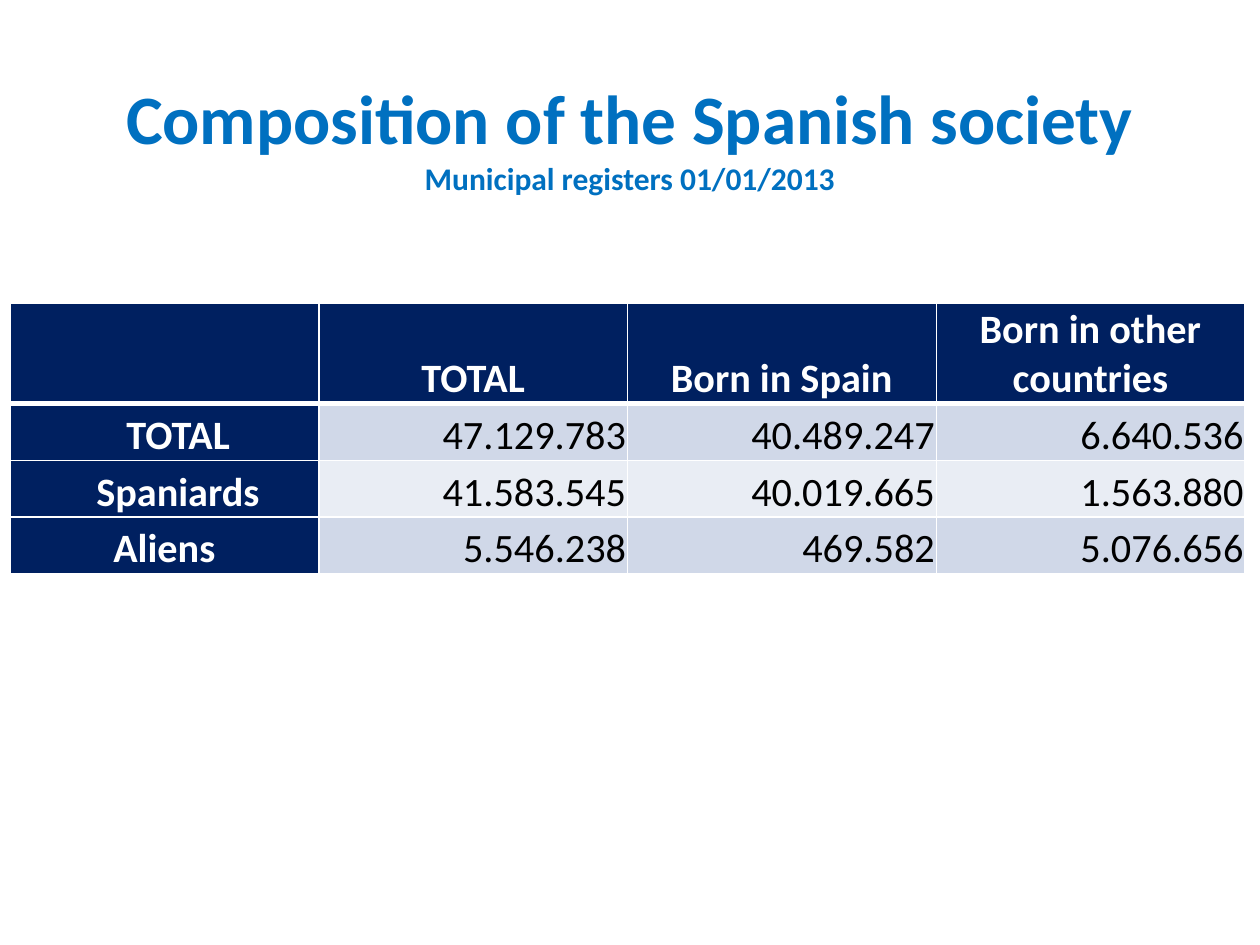
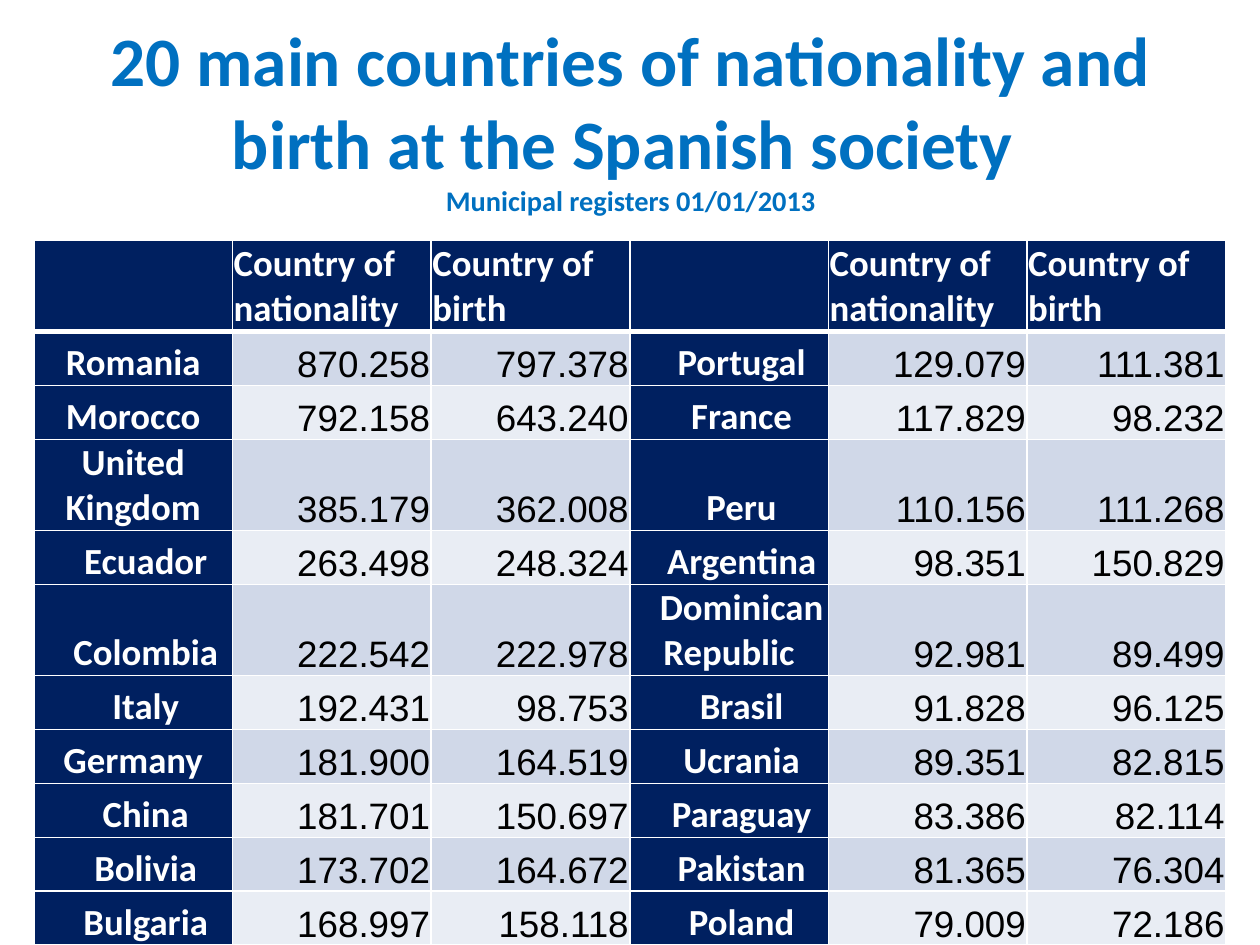
"""Builds two slides of Spanish population tables from the 2013 municipal registers."""
from copy import deepcopy

from lxml import etree
from pptx import Presentation
from pptx.dml.color import RGBColor
from pptx.enum import text
from pptx.oxml import ns
from pptx.util import Pt

NAVY, BLUE, WHITE, BLACK = "002060", "0070C0", "FFFFFF", "000000"
BANDS = ["D0D8E8", "E9EDF4"]
SUBTITLE = "Municipal registers 01/01/2013"
FLUSH_LABELS = {"Aliens", "Romania", "Morocco", "United Kingdom", "Germany"}
ALIGN = text.PP_ALIGN

SLIDES = [
    {
        "title": "Composition of the Spanish society",
        "title_box": (36, 21.6, 648, 112.3),
        "subtitle_size": 18,
        "table_at": (5.8, 173.5),
        "column_width": 176.4,
        "row_height": 32.4,
        "tall_rows": {0: 56.2},
        "size": 23,
        "figure_font": "Calibri",
        "header_align": ALIGN.CENTER,
        "label_columns": [0],
        "rows": [
            ["", "TOTAL", "Born in Spain", "Born in other countries"],
            ["TOTAL", "47.129.783", "40.489.247", "6.640.536"],
            ["Spaniards", "41.583.545", "40.019.665", "1.563.880"],
            ["Aliens", "5.546.238", "469.582", "5.076.656"],
        ],
    },
    {
        "title": "20 main countries of nationality and birth at the Spanish society ",
        "title_box": (20.2, 0, 680.4, 133.9),
        "subtitle_size": 16.2,
        "table_at": (19.4, 137.5),
        "column_width": 113.5,
        "row_height": 30.8,
        "tall_rows": {0: 51.2, 3: 51.2, 5: 51.2},
        "size": 21,
        "figure_font": "Arial",
        "header_align": ALIGN.LEFT,
        "label_columns": [0, 3],
        "rows": [
            ["", "Country of nationality", "Country of birth"] * 2,
            ["Romania", "870.258", "797.378", "Portugal", "129.079", "111.381"],
            ["Morocco", "792.158", "643.240", "France", "117.829", "98.232"],
            ["United Kingdom", "385.179", "362.008", "Peru", "110.156", "111.268"],
            ["Ecuador", "263.498", "248.324", "Argentina", "98.351", "150.829"],
            ["Colombia", "222.542", "222.978", "Dominican Republic", "92.981", "89.499"],
            ["Italy", "192.431", "98.753", "Brasil", "91.828", "96.125"],
            ["Germany", "181.900", "164.519", "Ucrania", "89.351", "82.815"],
            ["China", "181.701", "150.697", "Paraguay", "83.386", "82.114"],
            ["Bolivia", "173.702", "164.672", "Pakistan", "81.365", "76.304"],
            ["Bulgaria", "168.997", "158.118", "Poland", "79.009", "72.186"],
        ],
    },
]


def rgb(code):
    return RGBColor.from_string(code)


def add_run(paragraph, words, size, color, bold=True, font="Calibri"):
    run = paragraph.add_run()
    run.text = words
    run.font.size, run.font.bold, run.font.name = Pt(size), bold, font
    run.font.color.rgb = rgb(color)
    return run


def add_title(slide, content):
    title = slide.shapes.title
    title.left, title.top, title.width, title.height = map(Pt, content["title_box"])
    frame = title.text_frame
    frame.word_wrap = True
    frame.auto_size = text.MSO_AUTO_SIZE.NONE
    frame.vertical_anchor = text.MSO_ANCHOR.MIDDLE
    paragraph = frame.paragraphs[0]
    paragraph.alignment = ALIGN.CENTER
    heading = add_run(paragraph, content["title"], 39.6, BLUE)
    paragraph.add_line_break()
    paragraph._p[-1].append(deepcopy(heading._r.rPr))
    add_run(paragraph, SUBTITLE, content["subtitle_size"], BLUE)


def add_borders(cell, row):
    heavy_side = {0: "B", 1: "T"}.get(row)
    for position, side in enumerate("LRTB"):
        line = etree.Element(ns.qn(f"a:ln{side}"), w=str(Pt(3 if side == heavy_side else 1)))
        fill = etree.SubElement(line, ns.qn("a:solidFill"))
        etree.SubElement(fill, ns.qn("a:srgbClr"), val=WHITE)
        cell._tc.tcPr.insert(position, line)


def fill_cell(cell, words, row, column, content):
    is_header, is_label = row == 0, column in content["label_columns"]
    dark = is_header or is_label
    cell.fill.solid()
    cell.fill.fore_color.rgb = rgb(NAVY if dark else BANDS[(row - 1) % 2])
    add_borders(cell, row)
    cell.margin_left = cell.margin_right = cell.margin_top = Pt(0.7)
    cell.margin_bottom = 0
    cell.vertical_anchor = text.MSO_ANCHOR.BOTTOM
    if not words:
        return
    paragraph = cell.text_frame.paragraphs[0]
    if is_header:
        paragraph.alignment = content["header_align"]
    else:
        paragraph.alignment = ALIGN.CENTER if is_label else ALIGN.RIGHT
    if is_label and words not in FLUSH_LABELS:
        paragraph._p.get_or_add_pPr().set("indent", str(Pt(content["size"] * 0.68)))
    add_run(paragraph, words, content["size"], WHITE if dark else BLACK, dark,
            "Calibri" if dark else content["figure_font"])


def add_register_table(slide, content):
    rows = content["rows"]
    heights = [content["tall_rows"].get(i, content["row_height"]) for i in range(len(rows))]
    columns = len(rows[0])
    left, top = content["table_at"]
    table = slide.shapes.add_table(
        len(rows), columns, Pt(left), Pt(top),
        Pt(columns * content["column_width"]), Pt(sum(heights))).table
    table.first_row = True
    table.horz_banding = False
    for column in table.columns:
        column.width = Pt(content["column_width"])
    for i, (values, height) in enumerate(zip(rows, heights)):
        table.rows[i].height = Pt(height)
        for j, words in enumerate(values):
            fill_cell(table.cell(i, j), words, i, j, content)


def main():
    deck = Presentation()
    deck.slide_width, deck.slide_height = Pt(720), Pt(540)
    for content in SLIDES:
        slide = deck.slides.add_slide(deck.slide_layouts[5])
        add_title(slide, content)
        add_register_table(slide, content)
    deck.save("out.pptx")


if __name__ == "__main__":
    main()
